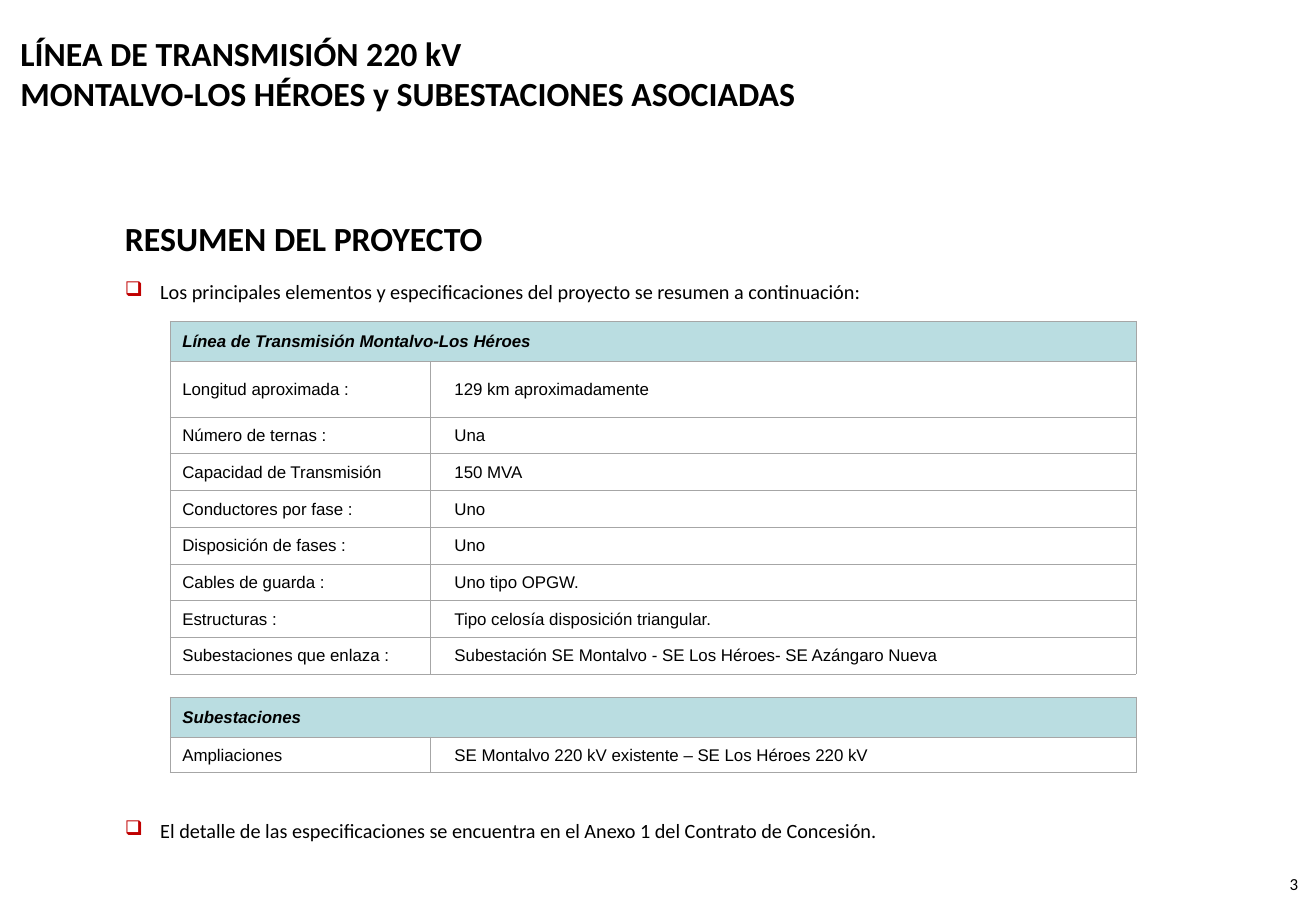
from dataclasses import dataclass
from typing import NamedTuple, Optional

from lxml.etree import SubElement
from pptx import Presentation
from pptx.dml.color import RGBColor
from pptx.enum.text import MSO_ANCHOR, PP_ALIGN
from pptx.oxml.ns import qn
from pptx.util import Inches, Pt

WIDE, HIGH = Inches(10.83), Inches(7.5)


@dataclass(frozen=True)
class Theme:
    ink: str = "000000"
    mark: str = "C00000"
    band: str = "BADDE1"
    rule: str = "A6A6A6"
    text: str = "Calibri"
    grid: str = "Arial"
    head: int = 20
    body: int = 12
    cell: int = 10
    gap: int = 6
    line: float = 0.5


THEME = Theme()


class Box(NamedTuple):
    """Place in percent of the slide's width and height."""
    left: float
    top: float
    width: float
    height: float


class Block(NamedTuple):
    box: Box
    lines: tuple[str, ...]
    size: int
    bold: bool = False
    bullet: bool = False
    indent: float = 0
    align: PP_ALIGN = PP_ALIGN.LEFT
    anchor: MSO_ANCHOR = MSO_ANCHOR.TOP


class Row(NamedTuple):
    height: float
    label: str = ""
    value: Optional[str] = None
    sides: str = "LRTB"


STEP = 4.03  # height of a plain row
BLOCKS = (
    Block(Box(-0.28, 1.73, 65.65, 12.53),
          ("LÍNEA DE TRANSMISIÓN 220 kV",
           "MONTALVO-LOS HÉROES y SUBESTACIONES ASOCIADAS"),
          THEME.head, bold=True, indent=0.1, anchor=MSO_ANCHOR.MIDDLE),
    Block(Box(8.59, 22.27, 42.11, 7.73), ("RESUMEN DEL PROYECTO",),
          THEME.head, bold=True, anchor=MSO_ANCHOR.MIDDLE),
    Block(Box(8.59, 30, 65.37, 4.13),
          ("Los principales elementos y especificaciones del proyecto "
           "se resumen a continuación:",), THEME.body, bullet=True),
    Block(Box(8.59, 89.2, 65.37, 4.13),
          ("El detalle de las especificaciones se encuentra en el Anexo 1 "
           "del Contrato de Concesión.",), THEME.body, bullet=True),
    Block(Box(94.55, 95.2, 5, 4.27), ("3",), THEME.cell, align=PP_ALIGN.RIGHT),
)
COLS = (19.76, 53.64)
ROWS = (
    Row(4.4, "Línea de Transmisión Montalvo-Los Héroes"),
    Row(6.13, "Longitud aproximada :", "129 km aproximadamente"),
    Row(STEP, "Número de ternas :", "Una"),
    Row(STEP, "Capacidad de Transmisión", "150 MVA"),
    Row(STEP, "Conductores por fase :", "Uno"),
    Row(STEP, "Disposición de fases :", "Uno"),
    Row(STEP, "Cables de guarda :", "Uno tipo OPGW."),
    Row(STEP, "Estructuras :", "Tipo celosía disposición triangular."),
    Row(STEP, "Subestaciones que enlaza :",
        "Subestación SE Montalvo - SE Los Héroes- SE Azángaro Nueva"),
    Row(2.53, sides="TB"),
    Row(4.4, "Subestaciones"),
    Row(3.87, "Ampliaciones",
        "SE Montalvo 220 kV existente – SE Los Héroes 220 kV"),
    Row(STEP, sides="T"),
)
GRID = Box(12.93, 35.27, sum(COLS), sum(row.height for row in ROWS))


def across(share: float) -> int:
    return round(WIDE * share / 100)


def down(share: float) -> int:
    return round(HIGH * share / 100)


def place(box: Box) -> tuple[int, int, int, int]:
    return (across(box.left), down(box.top),
            across(box.width), down(box.height))


def write(para, text: str, face: str, size: int, bold: bool = False,
          slant: bool = False) -> None:
    run = para.add_run()
    run.text = text
    font = run.font
    font.name, font.size = face, Pt(size)
    font.bold, font.italic = bold, slant
    font.color.rgb = RGBColor.from_string(THEME.ink)


def tint(node, color: str) -> None:
    SubElement(SubElement(node, qn("a:solidFill")),
               qn("a:srgbClr")).set("val", color)


def mark(props) -> None:
    props.set("marL", str(Inches(0.29)))
    props.set("indent", str(-Inches(0.29)))
    SubElement(SubElement(props, qn("a:buClr")),
               qn("a:srgbClr")).set("val", THEME.mark)
    SubElement(props, qn("a:buChar")).set("char", "❑")


def draw_block(slide, block: Block) -> None:
    frame = slide.shapes.add_textbox(*place(block.box)).text_frame
    frame.word_wrap = True
    frame.vertical_anchor = block.anchor
    for spot, line in enumerate(block.lines):
        para = frame.add_paragraph() if spot else frame.paragraphs[0]
        para.alignment = block.align
        props = para._p.get_or_add_pPr()
        if block.bullet:
            mark(props)
        elif block.indent:
            props.set("marL", str(Inches(block.indent)))
        write(para, line, THEME.text, block.size, block.bold)


def edge(cell, sides: str) -> None:
    props = cell._tc.get_or_add_tcPr()
    for side in "LRTB":
        line = SubElement(props, qn(f"a:ln{side}"))
        line.set("w", str(Pt(THEME.line)))
        if side in sides:
            tint(line, THEME.rule)
        else:
            SubElement(line, qn("a:noFill"))


def draw_cell(cell, text: str, row: Row, inset: float) -> None:
    title = bool(row.label) and row.value is None
    edge(cell, row.sides)
    if title:
        cell.fill.solid()
        cell.fill.fore_color.rgb = RGBColor.from_string(THEME.band)
    else:
        cell.fill.background()
    cell.vertical_anchor = MSO_ANCHOR.MIDDLE
    cell.margin_left, cell.margin_right = Inches(inset), Inches(0.01)
    cell.margin_top, cell.margin_bottom = Inches(0.01), 0
    para = cell.text_frame.paragraphs[0]
    if text:
        write(para, text, THEME.grid, THEME.cell, title, title)
    else:
        SubElement(para._p, qn("a:endParaRPr")).set("sz", str(THEME.gap * 100))


def draw_grid(slide) -> None:
    table = slide.shapes.add_table(len(ROWS), len(COLS), *place(GRID)).table
    table.first_row = table.horz_banding = False
    for col, share in zip(table.columns, COLS):
        col.width = across(share)
    for spot, row in enumerate(ROWS):
        table.rows[spot].height = down(row.height)
        left, right = table.cell(spot, 0), table.cell(spot, 1)
        draw_cell(left, row.label, row, 0.1)
        draw_cell(right, row.value or "", row, 0.2)
        if row.value is None:
            left.merge(right)


def main() -> None:
    deck = Presentation()
    deck.slide_width, deck.slide_height = WIDE, HIGH
    slide = deck.slides.add_slide(deck.slide_layouts[6])
    # Headings, bullets and page number
    for block in BLOCKS:
        draw_block(slide, block)
    # Project data
    draw_grid(slide)
    deck.save("out.pptx")


if __name__ == "__main__":
    main()
